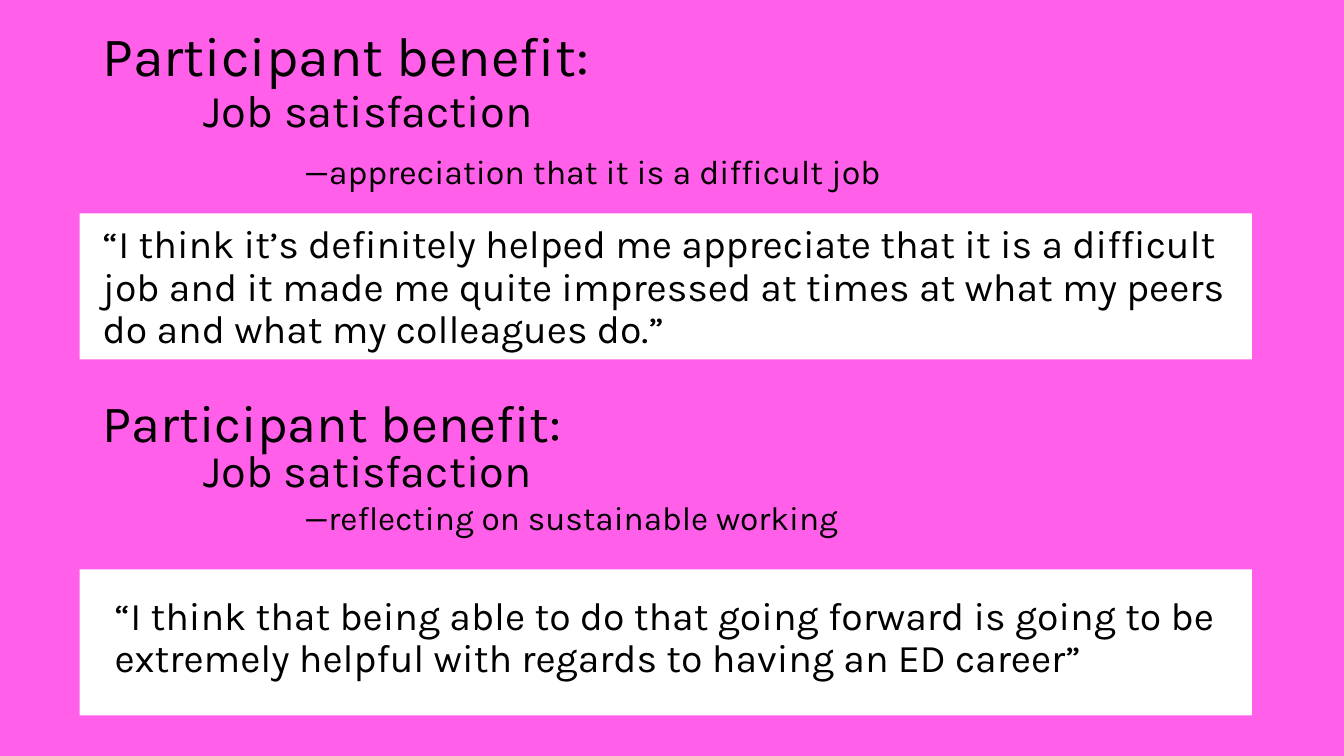
from dataclasses import dataclass

from pptx import Presentation
from pptx import util as u
from pptx.dml import color
from pptx.enum import shapes, text


@dataclass(frozen=True)
class Theme:
    """Colours, font and type sizes of the slide."""
    pink: str = "FF5FE9"
    white: str = "FFFFFF"
    black: str = "000000"
    font: str = "Karla"
    quote: float = 28
    first_heading: tuple = (39.6, 32.4, 24.3)
    second_heading: tuple = (37.4, 32.3, 23.8)


THEME = Theme()
CONTENT_WIDTH = 29.21
PANEL_HEIGHT = 3.68
LEVEL_INDENT = 2.54


def rgb(code):
    """Turn a hex code into a colour."""
    return color.RGBColor.from_string(code)


def add_line(paragraph, words, *, size, line_spacing, before=0, level=0):
    """Write one formatted paragraph, indented by its level."""
    properties = paragraph._p.get_or_add_pPr()
    properties.set("marL", str(u.Cm(LEVEL_INDENT * level)))
    properties.set("indent", "0")
    paragraph.line_spacing = line_spacing
    paragraph.space_before = u.Pt(before)
    run = paragraph.add_run()
    run.text = words
    run.font.name = THEME.font
    run.font.size = u.Pt(size)
    run.font.color.rgb = rgb(THEME.black)


def add_frame(slide, left, top, anchor):
    """Add a wrapping text frame of the content width."""
    box = slide.shapes.add_textbox(
        u.Cm(left), u.Cm(top), u.Cm(CONTENT_WIDTH), u.Cm(PANEL_HEIGHT))
    frame = box.text_frame
    frame.word_wrap = True
    frame.vertical_anchor = anchor
    return frame


def add_panel(slide, top):
    """Add the white panel behind a quote."""
    panel = slide.shapes.add_shape(
        shapes.MSO_SHAPE.RECTANGLE,
        u.Cm(2.01), u.Cm(top), u.Cm(29.54), u.Cm(PANEL_HEIGHT))
    panel.shadow.inherit = False
    panel.fill.solid()
    panel.fill.fore_color.rgb = rgb(THEME.white)
    panel.line.fill.background()


def add_heading(slide, top, theme_line, sizes, gaps, line_spacing):
    """Add a three-level heading, each level indented further."""
    frame = add_frame(slide, 2.34, top, text.MSO_ANCHOR.MIDDLE)
    lines = ("Participant benefit:", "Job satisfaction", theme_line)
    for level, (words, size, gap) in enumerate(zip(lines, sizes, gaps)):
        paragraph = frame.add_paragraph() if level else frame.paragraphs[0]
        add_line(paragraph, words, size=size, before=gap, level=level,
                 line_spacing=line_spacing)


def add_quote(slide, left, top, words):
    """Add a participant quote."""
    frame = add_frame(slide, left, top, text.MSO_ANCHOR.TOP)
    add_line(frame.paragraphs[0], words, size=THEME.quote, line_spacing=0.9)


def main():
    """Build the slide and save it."""
    deck = Presentation()
    deck.slide_width, deck.slide_height = u.Cm(33.87), u.Cm(19.05)
    slide = deck.slides.add_slide(deck.slide_layouts[6])
    slide.background.fill.solid()
    slide.background.fill.fore_color.rgb = rgb(THEME.pink)

    for panel_top in (5.38, 14.35):
        add_panel(slide, panel_top)

    add_heading(slide, 0.94, "—appreciation that it is a difficult job",
                THEME.first_heading, (0, 0, 13), 0.9)
    add_quote(slide, 2.34, 5.54,
              "“I think it’s definitely helped me appreciate that it is a "
              "difficult job and it made me quite impressed at times at what "
              "my peers do and what my colleagues do.”")
    add_heading(slide, 10.05, "—reflecting on sustainable working",
                THEME.second_heading, (0, 4, 10), 0.7)
    add_quote(slide, 2.64, 14.91,
              "“I think that being able to do that going forward is going to "
              "be extremely helpful with regards to having an ED career”")

    deck.save("out.pptx")


if __name__ == "__main__":
    main()
